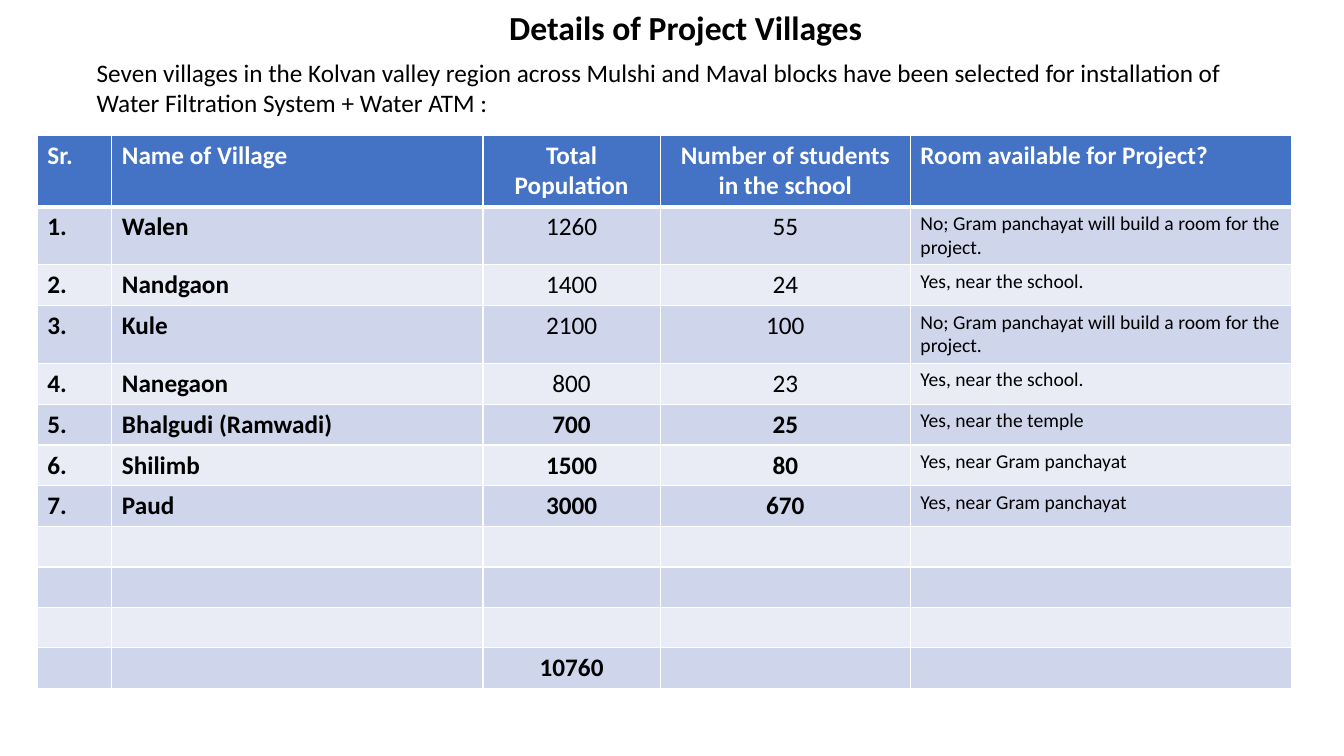
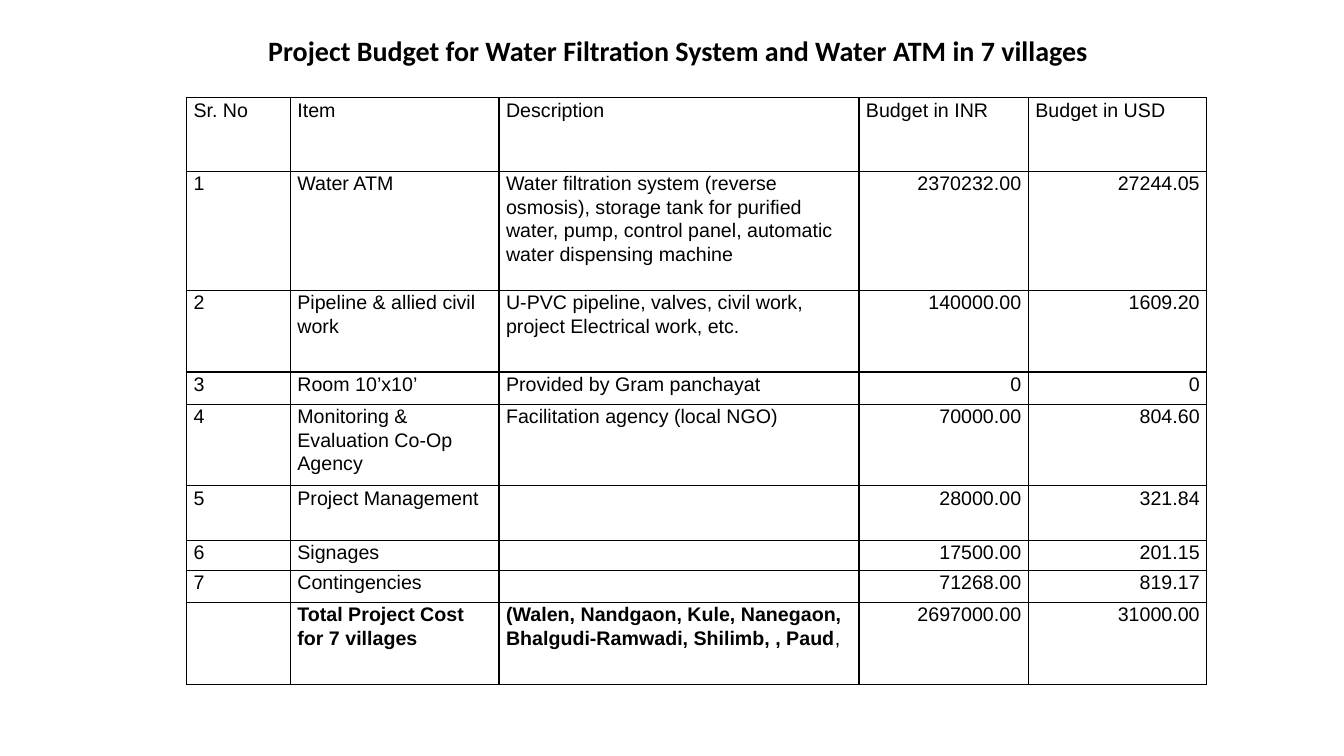
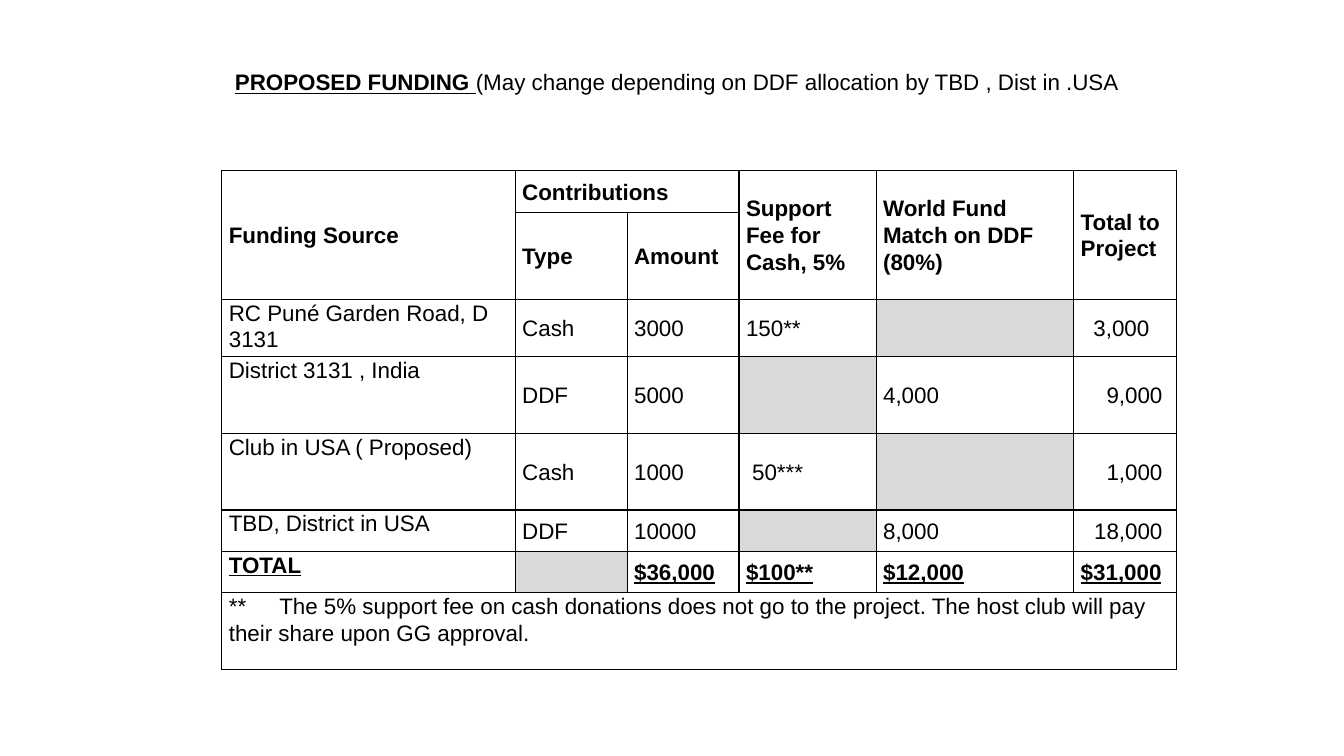
from dataclasses import dataclass, replace

from lxml import etree
from pptx import Presentation
from pptx.dml.color import RGBColor
from pptx.enum.text import MSO_ANCHOR, MSO_AUTO_SIZE, PP_ALIGN
from pptx.oxml.ns import qn
from pptx.util import Inches, Pt

LEFT, CENTER, RIGHT = PP_ALIGN.LEFT, PP_ALIGN.CENTER, PP_ALIGN.RIGHT
TOP, MIDDLE = MSO_ANCHOR.TOP, MSO_ANCHOR.MIDDLE
NO_FIT = MSO_AUTO_SIZE.NONE

BLACK = RGBColor(0x00, 0x00, 0x00)
WHITE = RGBColor(0xFF, 0xFF, 0xFF)
BLUE = RGBColor(0x44, 0x72, 0xC4)
DARK = RGBColor(0xCF, 0xD5, 0xEA)
LIGHT = RGBColor(0xE9, 0xEB, 0xF5)
GREY = RGBColor(0xD9, 0xD9, 0xD9)
SANS, HEAD = "Arial", "Calibri"


@dataclass(frozen=True)
class Cell:
    text: str = ""
    tail: str = ""
    size: float = 18
    font: str = SANS
    color: RGBColor = BLACK
    bold: bool = False
    under: bool = False
    align: PP_ALIGN = LEFT
    anchor: MSO_ANCHOR = TOP
    fill: RGBColor | None = None
    left: float = 0.07
    right: float = 0.07
    pad: float = 0
    spacing: float = 1.07
    after: float = 0
    line: RGBColor = BLACK
    above: float = 1
    below: float = 1


@dataclass(frozen=True)
class Grid:
    left: float
    top: float
    cols: tuple[float, ...]
    rows: tuple[float, ...]
    spans: tuple[tuple[int, int, int, int], ...] = ()


def write(frame, text: str, *, tail: str = "", size: float = 18, font: str = HEAD,
          color: RGBColor = BLACK, bold: bool = False, under: bool = False,
          align: PP_ALIGN = LEFT, spacing: float = 1, after: float = 0) -> None:
    """Write one paragraph per line of text; tail follows as a plain run."""
    for i, part in enumerate(text.split("\n")):
        para = frame.add_paragraph() if i else frame.paragraphs[0]
        para.alignment, para.line_spacing = align, spacing
        para.space_after = Pt(after)
        runs = [(part, bold, under)] + ([(tail, False, False)] if tail else [])
        for words, strong, lined in runs:
            run = para.add_run()
            run.text = words
            run.font.size, run.font.name = Pt(size), font
            run.font.bold, run.font.underline = strong, lined
            run.font.color.rgb = color


def put(shape, box: tuple[float, ...], text: str, **form) -> None:
    """Place a text shape and fill it."""
    shape.left, shape.top, shape.width, shape.height = map(Inches, box)
    frame = shape.text_frame
    frame.word_wrap, frame.auto_size = True, NO_FIT
    frame.vertical_anchor = TOP
    write(frame, text, **form)


def start(deck, box: tuple[float, ...], text: str, **form):
    """Add a slide with its title."""
    slide = deck.slides.add_slide(deck.slide_layouts[5])
    put(slide.shapes.title, box, text, **form)
    return slide


def edge(cell, item: Cell) -> None:
    """Draw the four borders of a cell."""
    props = cell._tc.get_or_add_tcPr()
    for side, width in (("L", 1), ("R", 1), ("T", item.above), ("B", item.below)):
        line = etree.SubElement(props, qn(f"a:ln{side}"), w=str(Pt(width)))
        solid = etree.SubElement(line, qn("a:solidFill"))
        etree.SubElement(solid, qn("a:srgbClr"), val=str(item.line))


def draw(slide, grid: Grid, cells: list[list[Cell]]) -> None:
    """Draw a table, row by row."""
    size = map(Inches, (grid.left, grid.top, sum(grid.cols), sum(grid.rows)))
    table = slide.shapes.add_table(len(grid.rows), len(grid.cols), *size).table
    table.first_row = table.horz_banding = False
    for col, width in zip(table.columns, grid.cols):
        col.width = Inches(width)
    for row, height in zip(table.rows, grid.rows):
        row.height = Inches(height)
    for r1, c1, r2, c2 in grid.spans:
        table.cell(r1, c1).merge(table.cell(r2, c2))
    for r, items in enumerate(cells):
        for c, item in enumerate(items):
            cell = table.cell(r, c)
            edge(cell, item)
            if item.fill is None:
                cell.fill.background()
            else:
                cell.fill.solid()
                cell.fill.fore_color.rgb = item.fill
            cell.margin_left, cell.margin_right = Inches(item.left), Inches(item.right)
            cell.margin_top = cell.margin_bottom = Inches(item.pad)
            cell.vertical_anchor = item.anchor
            if not cell.is_spanned:
                write(cell.text_frame, item.text, tail=item.tail, size=item.size,
                      font=item.font, color=item.color, bold=item.bold,
                      under=item.under, align=item.align, spacing=item.spacing,
                      after=item.after)


BUILD = "No; Gram panchayat will build a room for the project."
SCHOOL = "Yes, near the school."
OFFICE = "Yes, near Gram panchayat"
VILLAGES = [
    ("Sr.", "Name of Village", "Total\nPopulation",
     "Number of students in the school", "Room available for Project?"),
    ("1.", "Walen", "1260", "55", BUILD),
    ("2.", "Nandgaon", "1400", "24", SCHOOL),
    ("3.", "Kule", "2100", "100", BUILD),
    ("4.", "Nanegaon", "800", "23", SCHOOL),
    ("5.", "Bhalgudi (Ramwadi)", "700", "25", "Yes, near the temple"),
    ("6.", "Shilimb", "1500", "80", OFFICE),
    ("7.", "Paud", "3000", "670", OFFICE),
    *[("",) * 5] * 3,
    ("", "", "10760", "", ""),
]
BUDGET = [
    ("Sr. No", "Item", "Description", "Budget in INR", "Budget in USD"),
    ("1", "Water ATM", "Water filtration system (reverse osmosis), storage tank for "
     "purified water, pump, control panel, automatic water dispensing machine",
     "2370232.00", "27244.05"),
    ("2", "Pipeline & allied civil work",
     "U-PVC pipeline, valves, civil work, project Electrical work, etc.",
     "140000.00", "1609.20"),
    ("3", "Room 10’x10’", "Provided by Gram panchayat", "0", "0"),
    ("4", "Monitoring & Evaluation Co-Op Agency", "Facilitation agency (local NGO)",
     "70000.00", "804.60"),
    ("5", "Project Management", "", "28000.00", "321.84"),
    ("6", "Signages", "", "17500.00", "201.15"),
    ("7", "Contingencies", "", "71268.00", "819.17"),
    ("", "Total Project Cost for 7 villages",
     "(Walen, Nandgaon, Kule, Nanegaon, Bhalgudi-Ramwadi, Shilimb, , Paud",
     "2697000.00", "31000.00"),
]
FUNDING = [
    ("Funding Source", "Contributions", "", "Support Fee for Cash, 5%",
     "World Fund Match on DDF (80%)", "Total to Project"),
    ("", "Type", "Amount", "", "", ""),
    ("RC Puné Garden Road, D 3131", "Cash", "3000", "150**", "", "3,000"),
    ("District 3131 , India", "DDF", "5000", "", "4,000", "9,000"),
    ("Club in USA ( Proposed)", "Cash", "1000", "50***", "", "1,000"),
    ("TBD, District in USA", "DDF", "10000", "", "8,000", "18,000"),
    ("TOTAL", "", "$36,000", "$100**", "$12,000", "$31,000"),
    ("**\tThe 5% support fee on cash donations does not go to the project. "
     "The host club will pay their share upon GG approval.", "", "", "", "", ""),
]


def village(r: int, c: int, text: str) -> Cell:
    cell = Cell(text, font=HEAD, left=0.1, right=0.1, pad=0.05, spacing=1, line=WHITE,
                align=CENTER if c in (2, 3) else LEFT)
    if r == 0:
        return replace(cell, bold=True, color=WHITE, fill=BLUE, below=3)
    return replace(cell, bold=c < 2 or (c < 4 and r > 4), size=14 if text and c == 4 else 18,
                   fill=DARK if r % 2 else LIGHT, above=3 if r == 1 else 1)


def budget(r: int, c: int, text: str) -> Cell:
    total = r == len(BUDGET) - 1
    return Cell(text, tail="," if total and c == 2 else "", size=14,
                bold=total and c in (1, 2), align=RIGHT if r and c > 2 else LEFT)


def funding(r: int, c: int, text: str) -> Cell:
    total, note = r == 6, r == 7
    cell = Cell(text, size=16, after=8, right=0.1, bold=r < 2 or total, under=total,
                anchor=TOP if c == 0 and r > 1 else MIDDLE,
                fill=GREY if not text and r > 1 and not note else None)
    if c == 5 and 1 < r < 6:
        return replace(cell, align=RIGHT, right=0.27 if r == 2 else 0.14)
    return replace(cell, left=0.13) if text == "50***" else cell


def fill(data: list[tuple[str, ...]], make) -> list[list[Cell]]:
    """Turn rows of text into formatted cells."""
    return [[make(r, c, text) for c, text in enumerate(row)] for r, row in enumerate(data)]


def main() -> None:
    deck = Presentation()
    deck.slide_width, deck.slide_height = Inches(13.33), Inches(7.5)

    slide = start(deck, (4.95, 0.02, 5.55, 0.5), "Details of Project Villages",
                  size=24, bold=True)
    intro = slide.shapes.add_textbox(0, 0, 0, 0)
    put(intro, (0.86, 0.52, 11.35, 1.01),
        "Seven villages in the Kolvan valley region across Mulshi and Maval blocks have "
        "been selected for installation of Water Filtration System + Water ATM :")
    draw(slide, Grid(0.37, 1.34, (0.74, 3.68, 1.76, 2.48, 3.78),
                     (0.7, 0.57, 0.4, 0.57) + (0.4,) * 8), fill(VILLAGES, village))

    slide = start(deck, (2.56, 0.28, 8.38, 0.44),
                  "Project Budget for Water Filtration System and Water ATM in 7 villages",
                  size=20, bold=True)
    draw(slide, Grid(1.85, 0.97, (1.03, 2.07, 3.57, 1.68, 1.77),
                     (0.73, 1.18, 0.81, 0.32, 0.81, 0.54, 0.3, 0.32, 0.81)),
         fill(BUDGET, budget))

    slide = start(deck, (2.23, 0.61, 9.17, 0.39), "PROPOSED FUNDING ",
                  tail="(May change depending on DDF allocation by TBD , Dist in .USA",
                  size=16, font=SANS, bold=True, under=True, spacing=1.07, after=8)
    spans = ((0, 0, 1, 0), (0, 1, 0, 2), (0, 3, 1, 3), (0, 4, 1, 4), (0, 5, 1, 5),
             (7, 0, 7, 5))
    draw(slide, Grid(2.2, 1.69, (2.91, 1.11, 1.11, 1.36, 1.96, 1.02),
                     (0.42, 0.86, 0.57, 0.76, 0.76, 0.41, 0.41, 0.76), spans),
         fill(FUNDING, funding))

    deck.save("out.pptx")


if __name__ == "__main__":
    main()
